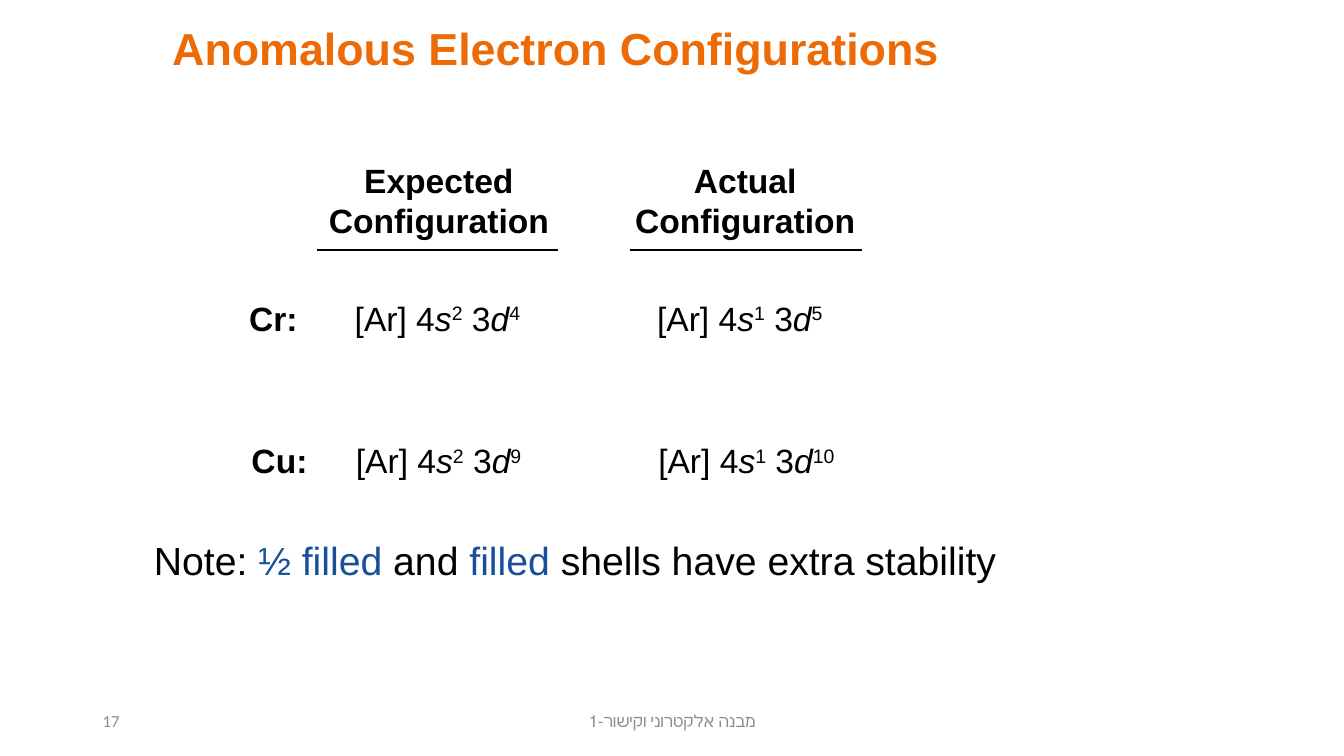
from dataclasses import dataclass

from lxml.etree import SubElement
from pptx import Presentation
from pptx.dml.color import RGBColor as Rgb
from pptx.enum.shapes import MSO_CONNECTOR as Connector
from pptx.enum.text import MSO_ANCHOR as Anchor, PP_ALIGN as Align
from pptx.oxml.ns import qn
from pptx.util import Cm, Pt


@dataclass(frozen=True)
class Theme:
    """Colours, fonts and type sizes of the slide."""
    text: Rgb = Rgb(0x00, 0x00, 0x00)
    title: Rgb = Rgb(0xED, 0x6B, 0x06)
    accent: Rgb = Rgb(0x19, 0x4E, 0x9D)
    footer: Rgb = Rgb(0x8C, 0x8C, 0x8C)
    body_font: str = "Arial"
    footer_font: str = "Calibri"
    title_size: int = 32
    note_size: int = 28
    body_size: int = 24
    footer_size: int = 12
    rule_width: int = 2


THEME = Theme()

# Heading, heading box left, rule left and right, formula left (cm)
COLUMNS = [
    ("Expected", 8.0, 7.98, 14.05, 8.69),
    ("Actual", 15.72, 15.88, 21.72, 16.31),
]
# Element, label right edge, top, formula shift (cm), (s, d) electrons per column
ROWS = [
    ("Cr:", 7.75, 7.37, 0, [("2", "4"), ("1", "5")]),
    ("Cu:", 8.0, 10.95, 0.03, [("2", "9"), ("1", "10")]),
]
LABEL_WIDTH = 2.2
LINE_HEIGHT = 1.27


def style_span(span, size, color=THEME.text, font=THEME.body_font, bold=False):
    """Format one run."""
    span.font.name = font
    span.font.size = Pt(size)
    span.font.bold = bold
    span.font.color.rgb = color


def add_box(page, left, top, width, height, wrap=False, anchor=Anchor.TOP):
    """Add an empty text box and return its text frame."""
    box = page.shapes.add_textbox(Cm(left), Cm(top), Cm(width), Cm(height))
    frame = box.text_frame
    frame.word_wrap = wrap
    frame.vertical_anchor = anchor
    return frame


def add_text(page, place, text, size=THEME.body_size, align=Align.LEFT,
             wrap=False, anchor=Anchor.TOP, **style):
    """Add text in one style, a paragraph per line, and return its frame."""
    frame = add_box(page, *place, wrap=wrap, anchor=anchor)
    frame.text = text
    for para in frame.paragraphs:
        para.alignment = align
        for span in para.runs:
            style_span(span, size, **style)
    return frame


def add_formula(page, left, top, s_count, d_count):
    """Add an argon-core configuration with raised electron counts."""
    width = 4.5 + 0.3 * len(d_count)
    para = add_box(page, left, top, width, LINE_HEIGHT).paragraphs[0]
    for core, orbital, count in [("[Ar] 4", "s", s_count), (" 3", "d", d_count)]:
        for text in (core, orbital, count):
            span = para.add_run()
            span.text = text
            style_span(span, THEME.body_size)
            span.font.italic = text == orbital
            if text == count:
                span.font._element.set("baseline", "30000")


def add_rule(page, left, right, top):
    """Add a horizontal line under a column heading."""
    rule = page.shapes.add_connector(
        Connector.STRAIGHT, Cm(left), Cm(top), Cm(right), Cm(top))
    rule.line.color.rgb = THEME.text
    rule.line.width = Pt(THEME.rule_width)
    SubElement(rule._element.spPr, qn("a:effectLst"))


def add_note(page):
    """Add the note, with its key words in the accent colour."""
    para = add_box(page, 3.63, 13.39, 21.79, 1.45).paragraphs[0]
    parts = ["Note: ", "½ filled", " and ", "filled", " shells have extra stability"]
    for index, text in enumerate(parts):
        span = para.add_run()
        span.text = text
        style_span(span, THEME.note_size, THEME.accent if index % 2 else THEME.text)


def add_footer(page):
    """Add the page number and the right-to-left lecture name."""
    style = dict(size=THEME.footer_size, color=THEME.footer,
                 font=THEME.footer_font, wrap=True, anchor=Anchor.MIDDLE)
    add_text(page, (2.34, 17.65, 7.62, 1.02), "17", **style)
    lecture = add_text(page, (11.23, 17.65, 11.43, 1.02),
                       "מבנה אלקטרוני וקישור-1", align=Align.CENTER, **style)
    lecture.paragraphs[0]._p.get_or_add_pPr().set("rtl", "1")


def main():
    """Build the slide and save it."""
    deck = Presentation()
    deck.slide_width, deck.slide_height = Cm(33.87), Cm(19.05)
    page = deck.slides.add_slide(deck.slide_layouts[6])

    title = add_text(page, (3.07, 0.41, 25.4, 1.63),
                     "Anomalous Electron Configurations", THEME.title_size,
                     wrap=True, color=THEME.title, bold=True)
    title.margin_left = Cm(1.27)

    for heading, left, rule_left, rule_right, _ in COLUMNS:
        add_text(page, (left, 3.89, 6.12, 2.31), f"{heading}\nConfiguration",
                 align=Align.CENTER, anchor=Anchor.MIDDLE, bold=True)
        add_rule(page, rule_left, rule_right, 6.3)

    for element, right, top, shift, counts in ROWS:
        add_text(page, (right - LABEL_WIDTH, top, LABEL_WIDTH, LINE_HEIGHT),
                 element, align=Align.RIGHT, bold=True)
        for column, (s_count, d_count) in zip(COLUMNS, counts):
            add_formula(page, column[-1] + shift, top, s_count, d_count)

    add_note(page)
    add_footer(page)
    deck.save("out.pptx")


main()
